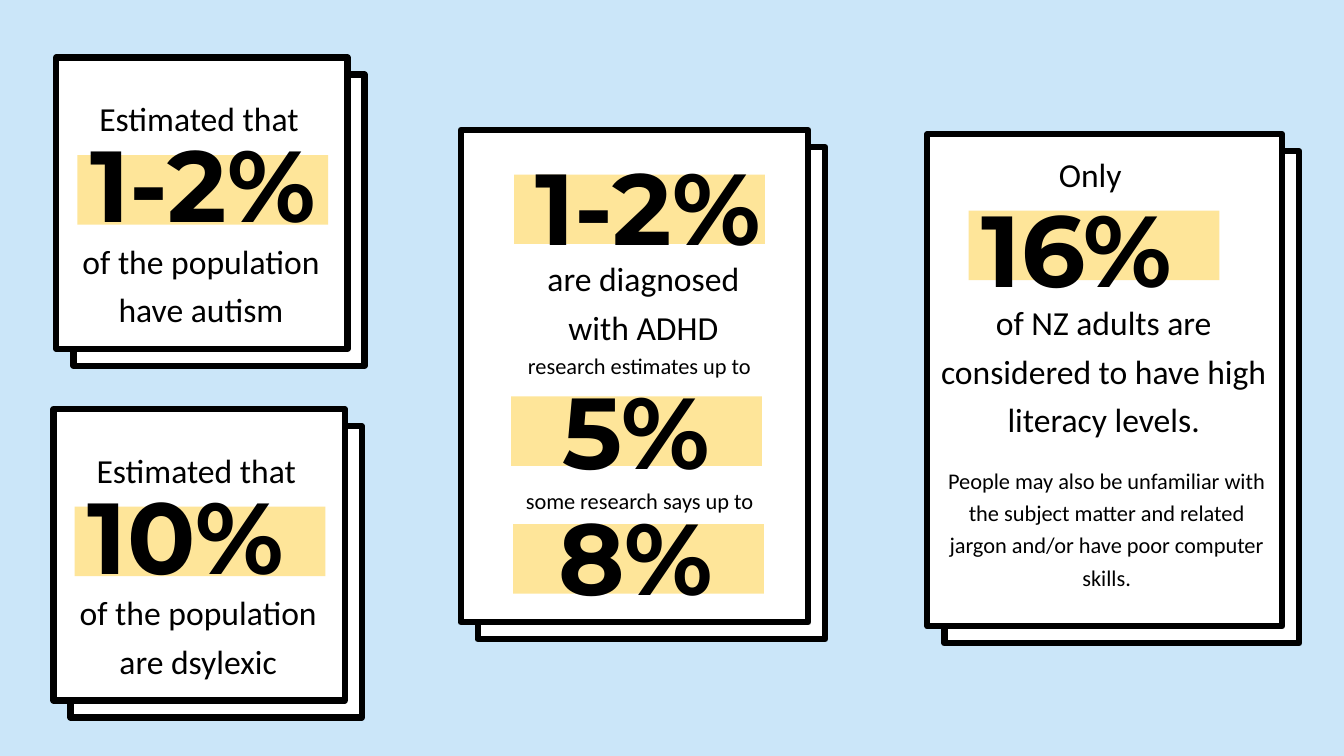
from pptx import Presentation
from pptx.dml.color import RGBColor
from pptx.enum.shapes import MSO_SHAPE
from pptx.enum.text import MSO_AUTO_SIZE, PP_ALIGN
from pptx.util import Cm, Pt

RECTANGLE = MSO_SHAPE.RECTANGLE
FIT_SHAPE = MSO_AUTO_SIZE.SHAPE_TO_FIT_TEXT
LEFT, CENTER = PP_ALIGN.LEFT, PP_ALIGN.CENTER

COLORS = {"sky": "CBE6F9", "paper": "FFFFFF", "ink": "000000", "marker": "FEE599"}
FORMATS = {
    "body": {"name": "Calibri", "size": Pt(24)},
    "small": {"name": "Calibri", "size": Pt(16)},
    "figure": {"name": "Montserrat", "size": Pt(72), "bold": True},
}
PAGE_WIDTH, PAGE_HEIGHT = 33.87, 19.05
SHEET_OFFSET = 0.43
MARKER_WIDTH, MARKER_HEIGHT = 6.32, 1.75
FIGURE_HEIGHT = 3.33


def color(name):
    return RGBColor.from_string(COLORS[name])


def add_rectangle(page, left, top, width, height, fill, outlined=False):
    shape = page.shapes.add_shape(RECTANGLE, Cm(left), Cm(top), Cm(width), Cm(height))
    shape.shadow.inherit = False
    shape.fill.solid()
    shape.fill.fore_color.rgb = color(fill)
    if outlined:
        shape.line.color.rgb = color("ink")
        shape.line.width = Pt(4.5)
    else:
        shape.line.fill.background()


def add_text(page, left, top, width, height, text, style, spacing=1.0, align=CENTER):
    box = page.shapes.add_textbox(Cm(left), Cm(top), Cm(width), Cm(height))
    frame = box.text_frame
    frame.word_wrap = True
    frame.auto_size = FIT_SHAPE
    para = frame.paragraphs[0]
    para.text = text
    para.alignment = align
    para.line_spacing = spacing
    for span in para.runs:
        span.font.color.rgb = color("ink")
        for attribute, value in FORMATS[style].items():
            setattr(span.font, attribute, value)


def add_sheets(page, left, top, width, height):
    """Two stacked sheets of paper, the front one at the given place."""
    for offset in (SHEET_OFFSET, 0):
        add_rectangle(page, left + offset, top + offset, width, height, "paper", True)


def add_marker(page, left, top):
    add_rectangle(page, left, top, MARKER_WIDTH, MARKER_HEIGHT, "marker")


def add_estimate_card(page, left, top, side, figure, outcome):
    add_sheets(page, left, top, side, side)
    add_marker(page, left + 0.53, top + 2.46)
    add_text(page, left - 0.15, top + 0.79, 7.49, 1.32, "Estimated that", "body", 1.1)
    add_text(page, left + 0.61, top + 1.5, 6.71, FIGURE_HEIGHT, figure, "figure", align=LEFT)
    add_text(page, left - 0.1, top + 4.29, 7.49, 2.64,
             "of the population\v" + outcome, "body", 1.2)


def add_adhd_card(page, left, top, width, height):
    add_sheets(page, left, top, width, height)
    # Captions
    add_text(page, left + 1.19, top + 2.9, 6.83, 2.64, "are diagnosed with ADHD", "body", 1.2)
    add_text(page, left + 1.27, top + 8.46, 6.48, 1.09,
             "some research says up to", "small", 1.62)
    add_text(page, left + 1.04, top + 5.46, 6.93, 0.94, "research estimates up to", "small")
    # Highlighted figures: marker place, figure place and width
    for marker_x, marker_y, x, y, figure_width, figure, align in (
        (1.35, 1.12, 1.63, 0.23, 11.15, "1-2%", LEFT),
        (1.27, 6.71, 1.52, 5.89, 5.82, "5%", CENTER),
        (1.32, 9.93, 1.5, 9.07, 5.82, "8%", CENTER),
    ):
        add_marker(page, left + marker_x, top + marker_y)
        add_text(page, left + x, top + y, figure_width, FIGURE_HEIGHT,
                 figure, "figure", align=align)


def add_literacy_card(page, left, top, width, height):
    add_sheets(page, left, top, width, height)
    add_marker(page, left + 1.04, top + 1.93)
    add_text(page, left + 0.36, top + 0.28, 7.49, 1.32, "Only", "body", 1.1)
    add_text(page, left + 1.12, top + 1.19, 5.36, FIGURE_HEIGHT, "16%", "figure", align=LEFT)
    add_text(page, left, top + 3.91, 8.89, 3.86,
             "of NZ adults are considered to have high literacy levels.", "body", 1.2)
    add_text(page, left + 0.05, top + 8.13, width, 3.48,
             "People may also be unfamiliar with the subject matter and related "
             "jargon and/or have poor computer skills.", "small", 1.2)


def main():
    deck = Presentation()
    deck.slide_width, deck.slide_height = Cm(PAGE_WIDTH), Cm(PAGE_HEIGHT)
    page = deck.slides.add_slide(deck.slide_layouts[6])
    add_rectangle(page, 0, 0, PAGE_WIDTH, PAGE_HEIGHT, "sky")
    add_estimate_card(page, 1.42, 1.45, 7.34, "1-2%", "have autism")
    add_adhd_card(page, 11.61, 3.28, 8.76, 12.4)
    add_literacy_card(page, 23.37, 3.38, 8.94, 12.4)
    add_estimate_card(page, 1.35, 10.31, 7.34, "10%", "are dsylexic")
    deck.save("out.pptx")


if __name__ == "__main__":
    main()
